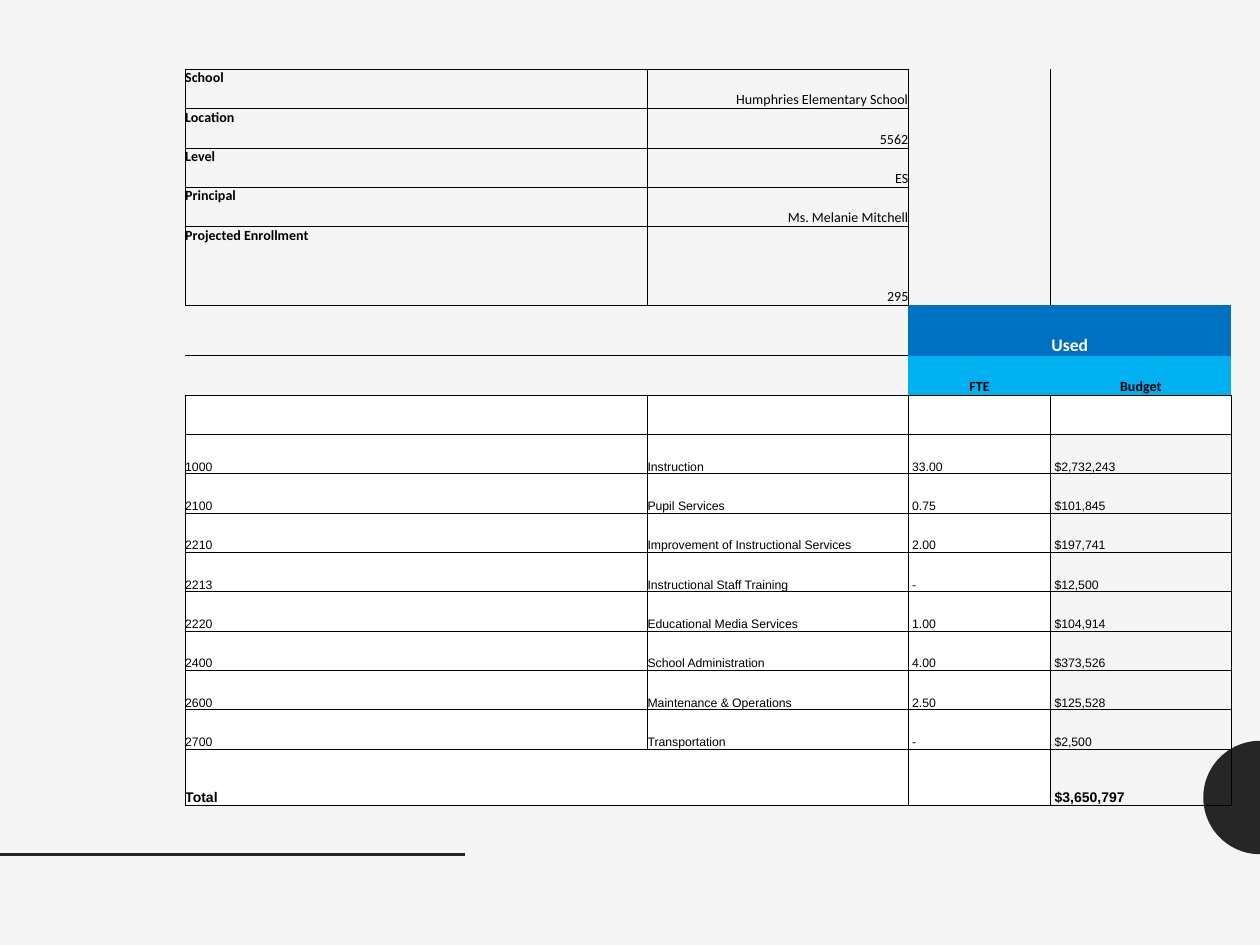
import math

from lxml import etree
from pptx import Presentation, util as u
from pptx.dml.color import RGBColor
from pptx.enum import shapes, text
from pptx.oxml import ns

Inches, Pt = u.Inches, u.Pt
COLORS = {"page": "F5F5F5", "ink": "000000", "accent": "262626",
          "white": "FFFFFF", "used": "0070C0", "subhead": "00B0F0"}
NO_STYLE = "{2D5ABB26-0587-4C30-8999-92F81FD0307C}"
SCHOOL = [
    ("School", "Humphries Elementary School"),
    ("Location", "5562"),
    ("Level", "ES"),
    ("Principal", "Ms. Melanie Mitchell"),
    ("Projected Enrollment", "295"),
]
BUDGET = [
    ("1000", "Instruction", "33.00", "$2,732,243"),
    ("2100", "Pupil Services", "0.75", "$101,845"),
    ("2210", "Improvement of Instructional Services", "2.00", "$197,741"),
    ("2213", "Instructional Staff Training", "-", "$12,500"),
    ("2220", "Educational Media Services", "1.00", "$104,914"),
    ("2400", "School Administration", "4.00", "$373,526"),
    ("2600", "Maintenance & Operations", "2.50", "$125,528"),
    ("2700", "Transportation", "-", "$2,500"),
]
USED_ROW = len(SCHOOL)
SUBHEAD_ROW = USED_ROW + 1
BLANK_ROW = SUBHEAD_ROW + 1
TOTAL_ROW = BLANK_ROW + len(BUDGET) + 1
COLUMN_WIDTHS = [3.67, 2.07, 1.13, 1.43]
USED_HEIGHT, TOTAL_HEIGHT = 0.4, 0.45
SIDES = {"a:lnL": (0, -1), "a:lnR": (0, 1), "a:lnT": (-1, 0), "a:lnB": (1, 0)}


def rgb(name):
    return RGBColor.from_string(COLORS[name])


def add_half_disc(slide, left, top, width, height):
    """Draw the left half of a disc, its flat side on the right edge of the box."""
    radius = height / 2
    points = []
    for step in range(49):
        angle = math.pi * (0.5 + step / 48)
        points.append((Inches(left + width + radius * math.cos(angle)),
                       Inches(top + radius + radius * math.sin(angle))))
    outline = slide.shapes.build_freeform(*points[0])
    outline.add_line_segments(points[1:], close=True)
    disc = outline.convert_to_shape()
    disc.shadow.inherit = False
    disc.fill.solid()
    disc.fill.fore_color.rgb = rgb("accent")
    disc.line.fill.background()


def add_rule(slide, left, top, width):
    rule = slide.shapes.add_connector(
        shapes.MSO_CONNECTOR.STRAIGHT,
        Inches(left), Inches(top), Inches(left + width), Inches(top))
    rule.line.color.rgb = rgb("accent")
    rule.line.width = Pt(2)
    etree.SubElement(rule._element.spPr, ns.qn("a:effectLst"))


def is_boxed(row, column):
    return (row < USED_ROW and column < 2) or row >= BLANK_ROW


def draw_borders(cell, row, column):
    """Line each side that belongs to a boxed cell or to a boxed neighbour."""
    properties = cell._tc.get_or_add_tcPr()
    for tag, (down, right) in SIDES.items():
        if is_boxed(row, column) or is_boxed(row + down, column + right):
            border = etree.SubElement(properties, ns.qn(tag), w=str(Pt(0.5)))
            paint = etree.SubElement(border, ns.qn("a:solidFill"))
            etree.SubElement(paint, ns.qn("a:srgbClr"), val=COLORS["ink"])


def prepare_cells(table):
    """Give every cell its margins, borders, fill and a small empty line."""
    for row, table_row in enumerate(table.rows):
        for column, cell in enumerate(table_row.cells):
            cell.margin_left = cell.margin_right = 0
            cell.margin_top = cell.margin_bottom = 0
            draw_borders(cell, row, column)
            if row == BLANK_ROW or (row > BLANK_ROW and column < 3):
                fill_cell(cell, "white")
            paragraph = cell.text_frame.paragraphs[0]
            etree.SubElement(paragraph._p, ns.qn("a:endParaRPr"), sz="700")


def fill_cell(cell, color):
    cell.fill.solid()
    cell.fill.fore_color.rgb = rgb(color)


def write(cell, words, size, font="Calibri", bold=False, color="ink",
          align=text.PP_ALIGN.LEFT, anchor=text.MSO_ANCHOR.BOTTOM, indent=0):
    cell.vertical_anchor = anchor
    cell.margin_left = Inches(indent)
    paragraph = cell.text_frame.paragraphs[0]
    paragraph.alignment = align
    run = paragraph.add_run()
    run.text = words
    run.font.name = font
    run.font.size = Pt(size)
    run.font.bold = bold
    run.font.color.rgb = rgb(color)


def write_school(table):
    for row, (label, value) in enumerate(SCHOOL):
        write(table.cell(row, 0), label, 8, bold=True, anchor=text.MSO_ANCHOR.TOP)
        write(table.cell(row, 1), value, 8, align=text.PP_ALIGN.RIGHT)


def write_used_header(table):
    used = table.cell(USED_ROW, 2)
    used.merge(table.cell(USED_ROW, 3))
    fill_cell(used, "used")
    write(used, "Used", 10, bold=True, color="white", align=text.PP_ALIGN.CENTER)
    for column, label in enumerate(("FTE", "Budget"), start=2):
        subhead = table.cell(SUBHEAD_ROW, column)
        fill_cell(subhead, "subhead")
        write(subhead, label, 8, bold=True, align=text.PP_ALIGN.CENTER)


def write_budget(table):
    for row, entries in enumerate(BUDGET, start=BLANK_ROW + 1):
        for column, entry in enumerate(entries):
            write(table.cell(row, column), entry, 7, "Arial",
                  indent=0.03 if column >= 2 else 0)
    total = table.cell(TOTAL_ROW, 0)
    total.merge(table.cell(TOTAL_ROW, 1))
    write(total, "Total", 8, "Arial", bold=True)
    write(table.cell(TOTAL_ROW, 3), "$3,650,797", 8, "Arial", bold=True, indent=0.03)


def add_budget_table(slide, left, top, width, height):
    row_count = TOTAL_ROW + 1
    frame = slide.shapes.add_table(row_count, len(COLUMN_WIDTHS), Inches(left),
                                   Inches(top), Inches(width), Inches(height))
    table = frame.table
    table.first_row = table.horz_banding = False
    table._tbl.tblPr.find(ns.qn("a:tableStyleId")).text = NO_STYLE
    for column, share in zip(table.columns, COLUMN_WIDTHS):
        column.width = Inches(width * share / sum(COLUMN_WIDTHS))
    # The enrollment row is two plain rows high.
    plain = (height - USED_HEIGHT - TOTAL_HEIGHT) / (row_count - 1)
    special = {USED_ROW - 1: 2 * plain, USED_ROW: USED_HEIGHT, TOTAL_ROW: TOTAL_HEIGHT}
    for index, row in enumerate(table.rows):
        row.height = Inches(special.get(index, plain))
    prepare_cells(table)
    write_school(table)
    write_used_header(table)
    write_budget(table)


def main():
    deck = Presentation()
    deck.slide_width, deck.slide_height = Inches(10), Inches(7.5)
    slide = deck.slides.add_slide(deck.slide_layouts[6])
    slide.background.fill.solid()
    slide.background.fill.fore_color.rgb = rgb("page")
    add_half_disc(slide, 9.55, 5.88, 0.45, 0.9)
    add_rule(slide, 0, 6.78, 3.69)
    add_budget_table(slide, 1.47, 0.55, 8.3, 5.85)
    deck.save("out.pptx")


if __name__ == "__main__":
    main()
